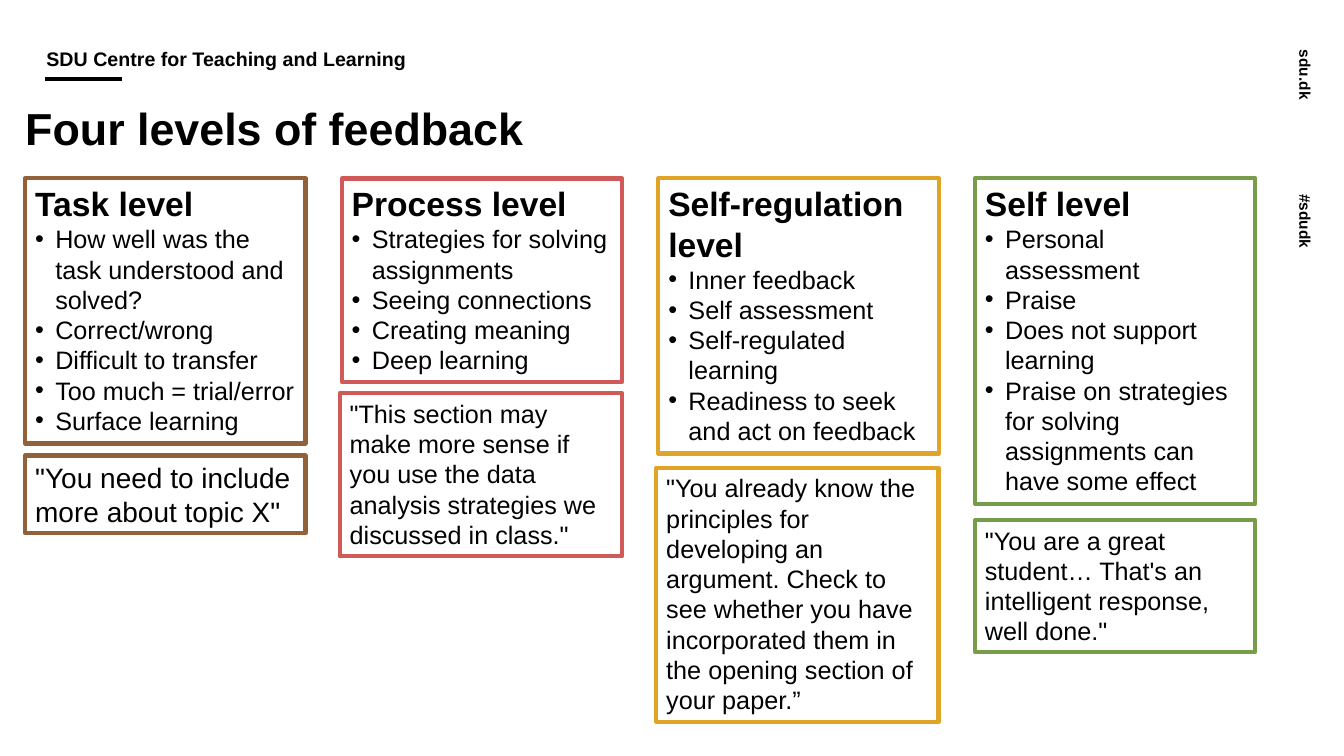
from dataclasses import dataclass

from lxml import etree
from pptx import Presentation
from pptx.dml.color import RGBColor
from pptx.enum.shapes import MSO_CONNECTOR, MSO_SHAPE
from pptx.enum.text import MSO_ANCHOR, MSO_AUTO_SIZE, PP_ALIGN
from pptx.oxml.ns import qn
from pptx.util import Inches, Pt

RECTANGLE = MSO_SHAPE.RECTANGLE
STRAIGHT = MSO_CONNECTOR.STRAIGHT
TOP, BOTTOM = MSO_ANCHOR.TOP, MSO_ANCHOR.BOTTOM
GROW = MSO_AUTO_SIZE.SHAPE_TO_FIT_TEXT
LEFT = PP_ALIGN.LEFT

FONT = "Arial"
COLORS = {
    "text": "000000",
    "task": "946037",
    "process": "D05A57",
    "regulation": "E0A526",
    "self": "789D4A",
}
COLUMN_LEFT, COLUMN_TOP = 0.25, 1.77
COLUMN_WIDTH, COLUMN_PITCH = 2.78, 3.14
BULLET_INDENT = 0.2


@dataclass
class Level:
    color: str
    heading: str
    points: list
    height: float
    quote: str
    quote_top: float
    quote_height: float
    quote_size: int = 18
    quote_outdent: float = 0


LEVELS = [
    Level("task", "Task level",
          ["How well was the task understood and solved?", "Correct/wrong",
           "Difficult to transfer", "Too much = trial/error", "Surface learning"],
          2.63, '"You need to include more about topic X"', 4.52, 0.77, quote_size=20),
    Level("process", "Process level",
          ["Strategies for solving assignments", "Seeing connections",
           "Creating meaning", "Deep learning"],
          2.02, '"This section may make more sense if you use the data analysis '
          'strategies we discussed in class."', 3.9, 1.62, quote_outdent=0.02),
    Level("regulation", "Self-regulation level",
          ["Inner feedback", "Self assessment", "Self-regulated learning",
           "Readiness to seek and act on feedback"],
          2.73, '"You already know the principles for developing an argument. '
          'Check to see whether you have incorporated them in the opening section '
          'of your paper.”', 4.64, 2.52, quote_outdent=0.02),
    Level("self", "Self level",
          ["Personal assessment", "Praise", "Does not support learning",
           "Praise on strategies for solving assignments can have some effect"],
          3.23, '"You are a great student… That\'s an intelligent response, '
          'well done."', 5.16, 1.31),
]


def color(name):
    return RGBColor.from_string(COLORS[name])


def write(para, text, size, bold=False):
    para.text = text
    para.alignment = LEFT
    para.font.name = FONT
    para.font.size = Pt(size)
    para.font.bold = bold
    para.font.color.rgb = color("text")


def add_bullet(para):
    properties = para._p.get_or_add_pPr()
    properties.set("marL", str(Inches(BULLET_INDENT)))
    properties.set("indent", str(-Inches(BULLET_INDENT)))
    etree.SubElement(properties, qn("a:buFont")).set("typeface", FONT)
    etree.SubElement(properties, qn("a:buChar")).set("char", "•")


def add_label(page, left, top, width, height, text, size, anchor=BOTTOM,
              rotation=0, spacing=1.0, inset_left=0, inset_bottom=0):
    box = page.shapes.add_textbox(Inches(left), Inches(top), Inches(width), Inches(height))
    box.rotation = rotation
    frame = box.text_frame
    frame.word_wrap = True
    frame.vertical_anchor = anchor
    frame.margin_left, frame.margin_bottom = Inches(inset_left), Inches(inset_bottom)
    frame.margin_top = frame.margin_right = 0
    para = frame.paragraphs[0]
    write(para, text, size, bold=True)
    para.line_spacing = spacing


def add_frame(page, left, top, width, height, outline):
    box = page.shapes.add_shape(
        RECTANGLE, Inches(left), Inches(top), Inches(width), Inches(height))
    box.shadow.inherit = False
    box.fill.background()
    box.line.color.rgb = color(outline)
    box.line.width = Pt(3)
    frame = box.text_frame
    frame.word_wrap = True
    frame.vertical_anchor = TOP
    frame.auto_size = GROW
    return frame


def add_header(page, left, top):
    rule_top = Inches(top + 0.29)
    rule = page.shapes.add_connector(
        STRAIGHT, Inches(left), rule_top, Inches(left + 0.76), rule_top)
    rule.line.color.rgb = color("text")
    rule.line.width = Pt(3)
    etree.SubElement(rule._element.spPr, qn("a:effectLst"))
    add_label(page, left, top, 6.22, 0.31, "SDU Centre for Teaching and Learning", 14,
              spacing=0.9, inset_left=0.01, inset_bottom=0.1)


def add_side_labels(page, left, top):
    for row, text in enumerate(["sdu.dk", "#sdudk"]):
        add_label(page, left, top + row * 1.43, 1, 0.41, text, 11, rotation=90)


def add_level(page, left, top, width, level):
    summary = add_frame(page, left, top, width, level.height, level.color)
    write(summary.paragraphs[0], level.heading, 24, bold=True)
    for point in level.points:
        para = summary.add_paragraph()
        add_bullet(para)
        write(para, point, 18)
    quote = add_frame(page, left - level.quote_outdent, level.quote_top,
                      width + level.quote_outdent, level.quote_height, level.color)
    write(quote.paragraphs[0], level.quote, level.quote_size)


def main():
    deck = Presentation()
    deck.slide_width, deck.slide_height = Inches(13.33), Inches(7.5)
    page = deck.slides.add_slide(deck.slide_layouts[6])
    add_side_labels(page, 12.56, 0.79)
    add_header(page, 0.45, 0.49)
    add_label(page, COLUMN_LEFT, 1.03, 11.99, 0.73, "Four levels of feedback", 32,
              anchor=TOP, spacing=0.97)
    for column, level in enumerate(LEVELS):
        add_level(page, COLUMN_LEFT + column * COLUMN_PITCH, COLUMN_TOP,
                  COLUMN_WIDTH, level)
    deck.save("out.pptx")


if __name__ == "__main__":
    main()
